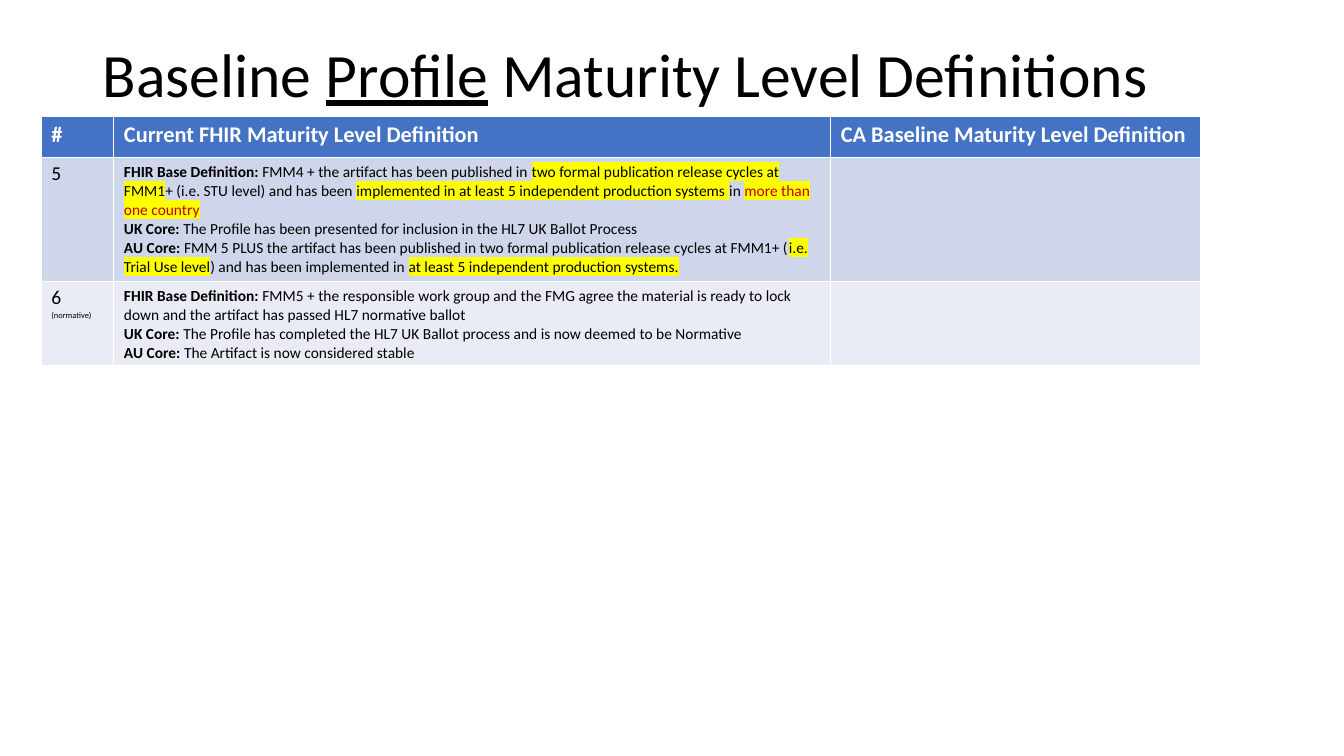
from dataclasses import dataclass

from lxml.etree import SubElement
from pptx import Presentation
from pptx.dml.color import RGBColor
from pptx.enum.text import MSO_ANCHOR
from pptx.oxml.ns import qn
from pptx.util import Inches, Pt


@dataclass(frozen=True)
class Theme:
    font: str = "Calibri"
    ink: str = "000000"
    header_ink: str = "FFFFFF"
    alert: str = "C00000"
    marker: str = "FFFF00"
    header_fill: str = "4472C4"
    band_fills: tuple = ("CFD5EA", "E9EBF5")
    title_size: int = 44
    header_size: int = 16
    level_size: int = 14
    body_size: int = 11
    note_size: int = 6


THEME = Theme()
COLUMN_WIDTHS = (0.72, 7.11, 3.67)
ROW_HEIGHTS = (0.41, 1.23, 0.84)
HEADERS = (
    "#",
    "Current FHIR Maturity Level Definition",
    "CA Baseline Maturity Level Definition",
)
MARKED = {"marker": THEME.marker}
MARKED_ALERT = {"marker": THEME.marker, "color": THEME.alert}

# Each level: number, note, and (source, spans) definitions.
LEVELS = (
    ("5", "", (
        ("FHIR Base Definition: ", (
            ("FMM4 + the artifact has been published in ", {}),
            ("two formal publication release cycles at FMM1", MARKED),
            ("+ (i.e. STU level) and has been ", {}),
            ("implemented in at least 5 independent production systems ", MARKED),
            ("in ", {}),
            ("more than one country", MARKED_ALERT),
        )),
        ("UK Core: ", (
            ("The Profile has been presented for inclusion in the HL7 UK Ballot Process", {}),
        )),
        ("AU Core: ", (
            ("FMM 5 PLUS the artifact has been published in two formal publication "
             "release cycles at FMM1+ (", {}),
            ("i.e. Trial Use level", MARKED),
            (") and has been implemented in ", {}),
            ("at least 5 independent production systems.", MARKED),
        )),
    )),
    ("6 ", "(normative)", (
        ("FHIR Base Definition: ", (
            ("FMM5 + the responsible work group and the FMG agree the material is ready "
             "to lock down and the artifact has passed HL7 normative ballot", {}),
        )),
        ("UK Core: ", (
            ("The Profile has completed the HL7 UK Ballot process and is now deemed "
             "to be Normative", {}),
        )),
        ("AU Core: ", (("The Artifact is now considered stable", {}),)),
    )),
)


def add_span(para, text, size, color=THEME.ink, bold=False, underline=False, marker=None):
    span = para.add_run()
    span.text = text
    font = span.font
    font.name = THEME.font
    font.size = Pt(size)
    font.bold = bold
    font.underline = underline
    font.color.rgb = RGBColor.from_string(color)
    if marker:
        properties = span._r.get_or_add_rPr()
        highlight = SubElement(properties, qn("a:highlight"))
        SubElement(highlight, qn("a:srgbClr"), val=marker)
        properties.find(qn("a:solidFill")).addnext(highlight)


def add_title(page):
    box = page.shapes.add_textbox(Inches(0.92), Inches(0.04), Inches(11.5), Inches(1.45))
    frame = box.text_frame
    frame.word_wrap = True
    frame.vertical_anchor = MSO_ANCHOR.MIDDLE
    para = frame.paragraphs[0]
    para.line_spacing = 0.9
    add_span(para, "Baseline ", THEME.title_size)
    add_span(para, "Profile", THEME.title_size, underline=True)
    add_span(para, " Maturity Level Definitions", THEME.title_size)


def fill_row(row, color):
    for cell in row.cells:
        cell.fill.solid()
        cell.fill.fore_color.rgb = RGBColor.from_string(color)


def write_level(cell, number, note):
    para = cell.text_frame.paragraphs[0]
    add_span(para, number, THEME.level_size)
    if note:
        add_span(para, note, THEME.note_size)


def write_definitions(cell, definitions):
    frame = cell.text_frame
    for index, (source, spans) in enumerate(definitions):
        para = frame.add_paragraph() if index else frame.paragraphs[0]
        add_span(para, source, THEME.body_size, bold=True)
        for text, style in spans:
            add_span(para, text, THEME.body_size, **style)


def add_maturity_table(page):
    table = page.shapes.add_table(
        len(ROW_HEIGHTS), len(COLUMN_WIDTHS), Inches(0.41), Inches(1.15),
        Inches(sum(COLUMN_WIDTHS)), Inches(sum(ROW_HEIGHTS)),
    ).table
    for column, width in zip(table.columns, COLUMN_WIDTHS):
        column.width = Inches(width)
    for row, height in zip(table.rows, ROW_HEIGHTS):
        row.height = Inches(height)
    header, *level_rows = table.rows
    fill_row(header, THEME.header_fill)
    for cell, text in zip(header.cells, HEADERS):
        add_span(cell.text_frame.paragraphs[0], text, THEME.header_size,
                 THEME.header_ink, bold=True)
    for row, fill, (number, note, definitions) in zip(level_rows, THEME.band_fills, LEVELS):
        fill_row(row, fill)
        write_level(row.cells[0], number, note)
        write_definitions(row.cells[1], definitions)


def main():
    deck = Presentation()
    deck.slide_width = Inches(13.33)
    deck.slide_height = Inches(7.5)
    page = deck.slides.add_slide(deck.slide_layouts[6])
    add_title(page)
    add_maturity_table(page)
    deck.save("out.pptx")


if __name__ == "__main__":
    main()
